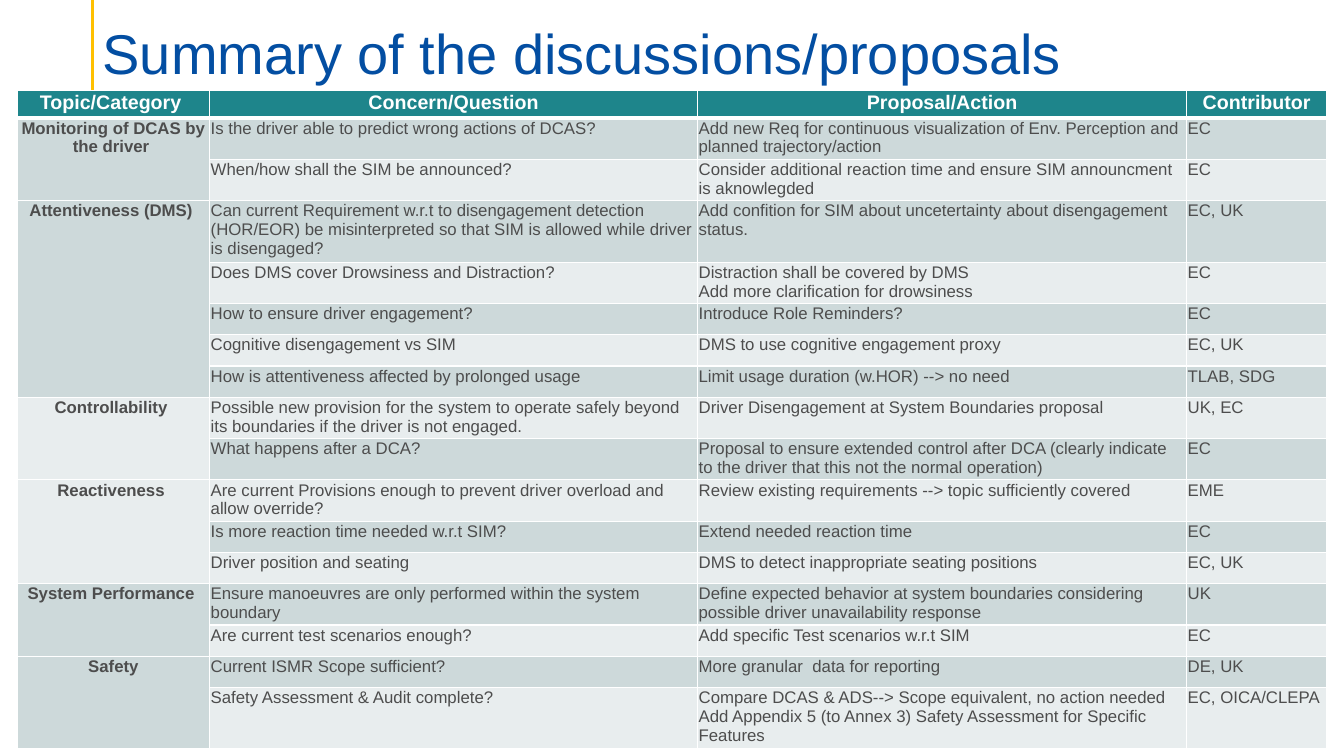
from lxml import etree
from pptx import Presentation
from pptx.dml.color import RGBColor
from pptx.enum.shapes import MSO_CONNECTOR
from pptx.enum.text import MSO_ANCHOR, PP_ALIGN
from pptx.oxml.ns import qn
from pptx.util import Inches, Pt

TITLE = "Summary of the discussions/proposals"
HEADER = ("Topic/Category ", "Concern/Question", "Proposal/Action", "Contributor")
# Topic -> rows of (row height, concern, proposal, contributor)
TOPICS = {
    "Monitoring of DCAS by the driver ": [
        (0.39, "Is the driver able to predict wrong actions of DCAS?",
         "Add new Req for continuous visualization of Env. Perception and planned trajectory/action", "EC"),
        (0.39, "When/how shall the SIM be announced?",
         "Consider additional reaction time and ensure SIM announcment is aknowlegded", "EC"),
    ],
    "Attentiveness (DMS) ": [
        (0.58, "Can current Requirement w.r.t to disengagement detection (HOR/EOR) be misinterpreted "
         "so that SIM is allowed while driver is disengaged?",
         "Add confition for SIM about uncetertainty about disengagement status.", "EC, UK"),
        (0.39, "Does DMS cover Drowsiness and Distraction?",
         "Distraction shall be covered by DMS\vAdd more clarification for drowsiness", "EC"),
        (0.31, "How to ensure driver engagement?", "Introduce Role Reminders?", "EC"),
        (0.31, "Cognitive disengagement vs SIM", "DMS to use cognitive engagement proxy", "EC, UK"),
        (0.31, "How is attentiveness affected by prolonged usage",
         "Limit usage duration (w.HOR) --> no need", "TLAB, SDG"),
    ],
    "Controllability ": [
        (0.39, "Possible new provision for the system to operate safely beyond its boundaries "
         "if the driver is not engaged.",
         "Driver Disengagement at System Boundaries proposal", "UK, EC"),
        (0.39, "What happens after a DCA?",
         "Proposal to ensure extended control after DCA (clearly indicate to the driver "
         "that this not the normal operation)", "EC"),
    ],
    "Reactiveness ": [
        (0.39, "Are current Provisions enough to prevent driver overload and allow override?",
         "Review existing requirements --> topic sufficiently covered", "EME"),
        (0.31, "Is more reaction time needed w.r.t SIM?", "Extend needed reaction time", "EC"),
        (0.31, "Driver position and seating", "DMS to detect inappropriate seating positions", "EC, UK"),
    ],
    "System Performance ": [
        (0.39, "Ensure manoeuvres are only performed within the system boundary",
         "Define expected behavior at system boundaries considering possible driver "
         "unavailability response", "UK"),
        (0.31, "Are current test scenarios enough?", "Add specific Test scenarios w.r.t SIM", "EC"),
    ],
    "Safety": [
        (0.31, "Current ISMR Scope sufficient?", "More granular  data for reporting", "DE, UK"),
        (0.58, "Safety Assessment & Audit complete?",
         "Compare DCAS & ADS--> Scope equivalent, no action needed\n"
         "Add Appendix 5 (to Annex 3) Safety Assessment for Specific Features", "EC, OICA/CLEPA"),
    ],
}
COLORS = {"title": "034EA2", "accent": "FFC000", "header": "1E858B", "white": "FFFFFF",
          "text": "4D4D4D", "dark": "CDD9DA", "light": "E8EDEE"}
COL_WIDTHS = (1.91, 4.84, 4.85, 1.39)
HEADER_HEIGHT = 0.27
FONT = "Arial"


def rgb(name):
    return RGBColor.from_string(COLORS[name])


def write(tf, text, size=12, color="text", bold=False, align=PP_ALIGN.LEFT, spacing=None):
    """Fill a text frame; a newline starts a paragraph, a vertical tab breaks a line."""
    tf.word_wrap = True
    for i, line in enumerate(text.split("\n")):
        p = tf.add_paragraph() if i else tf.paragraphs[0]
        p.text = line
        p.alignment = align
        if spacing:
            p.line_spacing = spacing
        for r in p.runs:
            r.font.name, r.font.size, r.font.bold = FONT, Pt(size), bold
            r.font.color.rgb = rgb(color)


def style_cell(cell, fill, bottom=1):
    cell.margin_left = cell.margin_right = cell.margin_top = Inches(0.01)
    cell.margin_bottom = 0
    tcPr = cell._tc.get_or_add_tcPr()
    for side, width in (("L", 1), ("R", 1), ("T", 1), ("B", bottom)):
        ln = etree.SubElement(tcPr, qn(f"a:ln{side}"), w=str(Pt(width)))
        solid = etree.SubElement(ln, qn("a:solidFill"))
        etree.SubElement(solid, qn("a:srgbClr"), val=COLORS["white"])
    cell.fill.solid()
    cell.fill.fore_color.rgb = rgb(fill)


def add_title(slide):
    line = slide.shapes.add_connector(MSO_CONNECTOR.STRAIGHT, Inches(0.92), 0, Inches(0.92), Inches(1.4))
    line.line.color.rgb = rgb("accent")
    line.line.width = Pt(2.25)
    etree.SubElement(line._element.spPr, qn("a:effectLst"))

    tf = slide.shapes.add_textbox(Inches(0.92), 0, Inches(11.5), Inches(0.86)).text_frame
    tf.vertical_anchor = MSO_ANCHOR.BOTTOM
    tf.margin_bottom = 0
    write(tf, TITLE, size=40, color="title", spacing=0.9)


def add_summary_table(slide):
    heights = [HEADER_HEIGHT] + [row[0] for rows in TOPICS.values() for row in rows]
    table = slide.shapes.add_table(len(heights), len(COL_WIDTHS), Inches(0.17), Inches(0.9),
                                   Inches(sum(COL_WIDTHS)), Inches(sum(heights))).table
    table.first_row = table.horz_banding = False
    for col, width in zip(table.columns, COL_WIDTHS):
        col.width = Inches(width)
    for i, (row, height) in enumerate(zip(table.rows, heights)):
        row.height = Inches(height)
        for cell in row.cells:
            if i == 0:
                style_cell(cell, "header", bottom=3)
            else:
                style_cell(cell, "dark" if i % 2 else "light")

    for c, text in enumerate(HEADER):
        write(table.cell(0, c).text_frame, text, size=14, color="white", bold=True, align=PP_ALIGN.CENTER)
    top = 1
    for topic, rows in TOPICS.items():
        first = table.cell(top, 0)
        first.merge(table.cell(top + len(rows) - 1, 0))
        write(first.text_frame, topic, bold=True, align=PP_ALIGN.CENTER)
        for r, (_, *texts) in enumerate(rows, top):
            for c, text in enumerate(texts, 1):
                write(table.cell(r, c).text_frame, text)
        top += len(rows)


def main():
    prs = Presentation()
    prs.slide_width, prs.slide_height = Inches(13.33), Inches(7.5)
    slide = prs.slides.add_slide(prs.slide_layouts[6])
    add_title(slide)
    add_summary_table(slide)
    prs.save("out.pptx")


if __name__ == "__main__":
    main()
